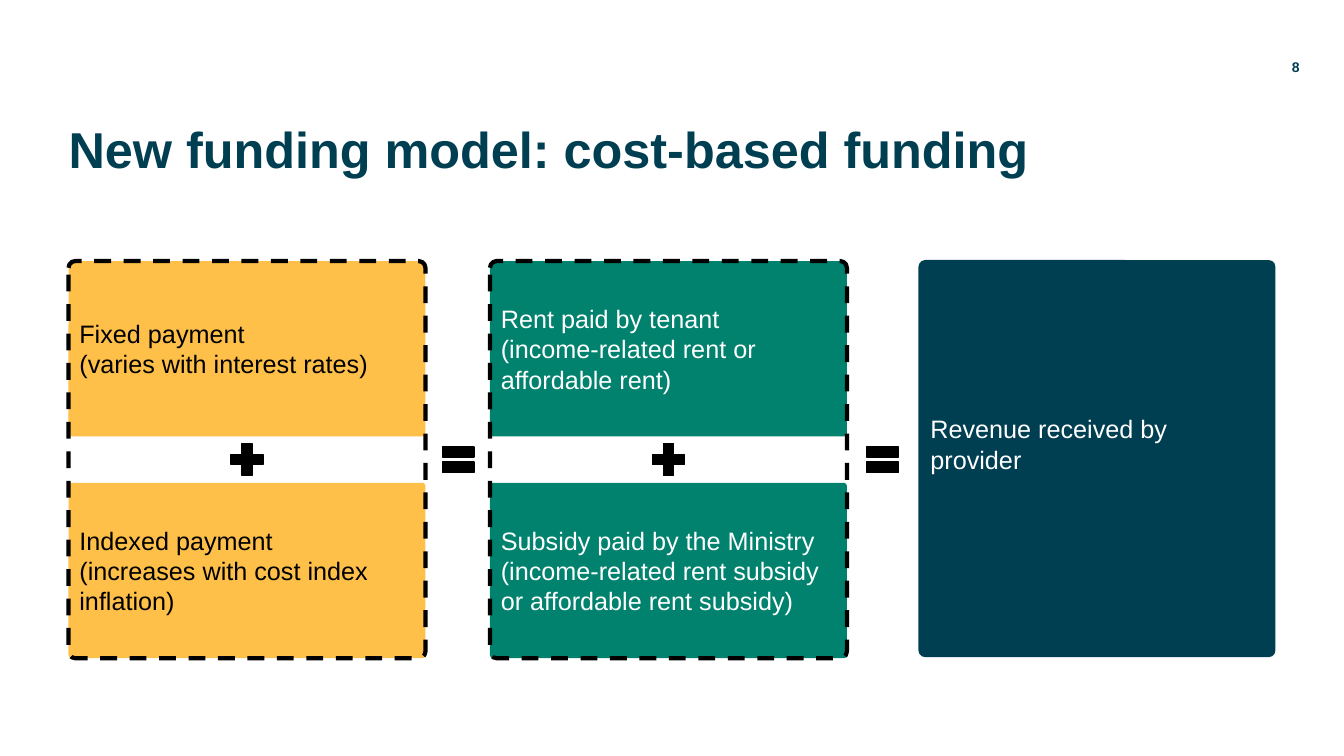
from dataclasses import dataclass

from pptx import Presentation
from pptx.dml.color import RGBColor
from pptx.enum.dml import MSO_LINE
from pptx.enum.shapes import MSO_SHAPE
from pptx.enum.text import MSO_ANCHOR, PP_ALIGN
from pptx.util import Inches, Pt

ROUND = MSO_SHAPE.ROUNDED_RECTANGLE
PLUS, EQUAL = MSO_SHAPE.MATH_PLUS, MSO_SHAPE.MATH_EQUAL
DASH = MSO_LINE.DASH
TOP, MIDDLE = MSO_ANCHOR.TOP, MSO_ANCHOR.MIDDLE
LEFT, RIGHT = PP_ALIGN.LEFT, PP_ALIGN.RIGHT


@dataclass(frozen=True)
class Theme:
    font: str = "Arial"
    navy: str = "003E52"
    green: str = "00826E"
    amber: str = "FFC04A"
    black: str = "000000"
    white: str = "FFFFFF"
    title: int = 36
    body: int = 18
    small: int = 10


THEME = Theme()
CARD_W, CARD_H = 3.54, 1.74
STACK_H = 3.94
SIGN = 0.43


def rgb(code):
    return RGBColor.from_string(code)


def write(shape, lines, size, color, bold=False, align=LEFT,
          anchor=MIDDLE, pad=(0.1, 0.05, 0.1, 0.05)):
    frame = shape.text_frame
    frame.word_wrap = True
    frame.vertical_anchor = anchor
    (frame.margin_left, frame.margin_top,
     frame.margin_right, frame.margin_bottom) = map(Inches, pad)
    frame.text = "\n".join(lines)
    for par in frame.paragraphs:
        par.alignment = align
        par.font.name = THEME.font
        par.font.size = Pt(size)
        par.font.bold = bold
        par.font.color.rgb = rgb(color)
    return frame


def draw(slide, kind, box, fill=None, line=None, width=1):
    shape = slide.shapes.add_shape(kind, *map(Inches, box))
    shape.shadow.inherit = False
    if fill:
        shape.fill.solid()
        shape.fill.fore_color.rgb = rgb(fill)
    else:
        shape.fill.background()
    if line:
        shape.line.color.rgb = rgb(line)
        shape.line.width = Pt(width)
    else:
        shape.line.fill.background()
    if kind == ROUND:
        shape.adjustments[0] = 0.019
    return shape


def sign(slide, kind, left, top):
    draw(slide, kind, (left, top, SIGN, SIGN), THEME.black, THEME.black)


def header(slide, box):
    left, top, width, height = box
    # Page number, above the right end of the title
    page = slide.shapes.add_textbox(
        *map(Inches, (left + width - 0.38, top - 0.78, 0.62, 0.4)))
    write(page, ["8"], THEME.small, THEME.navy, True, RIGHT,
          pad=(0.1, 0.05, 0, 0.05))
    # Title
    title = slide.shapes.add_textbox(*map(Inches, box))
    frame = write(title, ["New funding model: cost-based funding"],
                  THEME.title, THEME.navy, True, anchor=TOP, pad=(0, 0, 0, 0))
    frame.paragraphs[0].line_spacing = 0.9


def stack(slide, box, cards, fill, color):
    """Two cards added together inside a dashed frame."""
    left, top, width, height = box
    step = height - CARD_H
    for row, lines in enumerate(cards):
        card = draw(slide, ROUND, (left, top + row * step, width, CARD_H), fill)
        write(card, lines, THEME.body, color)
    frame = draw(slide, ROUND, box, line=THEME.black, width=3)
    frame.line.dash_style = DASH
    sign(slide, PLUS, left + (width - SIGN) / 2, top + (height - SIGN) / 2)


def total(slide, box):
    card = draw(slide, ROUND, box, THEME.navy)
    # The deeper bottom inset lifts the text above the middle
    write(card, ["Revenue received by provider"], THEME.body, THEME.white,
          pad=(0.1, 0.05, 0.1, 0.34))


def model(slide, box):
    left, top, width, height = box
    # Costs
    stack(slide, (left, top, CARD_W, height),
          [["Fixed payment", "(varies with interest rates)"],
           ["Indexed payment", "(increases with cost index inflation)"]],
          THEME.amber, THEME.black)
    # Income
    stack(slide, (left + 4.18, top, CARD_W, height),
          [["Rent paid by tenant",
            "(income-related rent or affordable rent)"],
           ["Subsidy paid by the Ministry",
            "(income-related rent subsidy or affordable rent subsidy)"]],
          THEME.green, THEME.white)
    # Revenue
    total(slide, (left + width - CARD_W, top - 0.01, CARD_W, height))
    # Equal signs between the columns
    for shift in (3.65, 7.86):
        sign(slide, EQUAL, left + shift, top + (height - SIGN) / 2)


def main():
    deck = Presentation()
    deck.slide_width, deck.slide_height = Inches(13.33), Inches(7.5)
    slide = deck.slides.add_slide(deck.slide_layouts[6])
    header(slide, (0.68, 1.24, 11.97, 0.96))
    model(slide, (0.68, 2.59, 11.97, STACK_H))
    deck.save("out.pptx")


if __name__ == "__main__":
    main()
